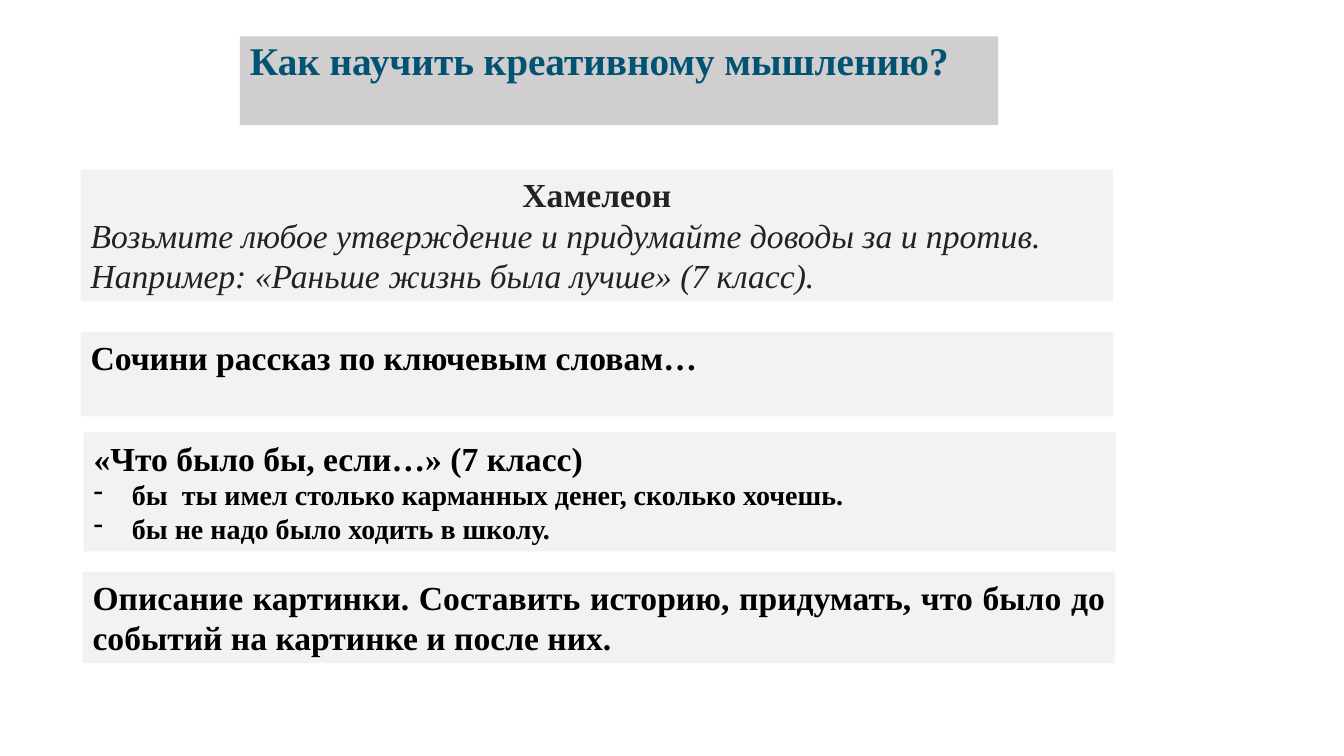
from lxml import etree
from pptx import Presentation
from pptx.dml.color import RGBColor
from pptx.enum.text import PP_ALIGN
from pptx.oxml.ns import qn
from pptx.util import Inches, Pt

LEFT, CENTER, JUSTIFY = PP_ALIGN.LEFT, PP_ALIGN.CENTER, PP_ALIGN.JUSTIFY
FONT = "Times New Roman"
PANEL_FILL = "F2F2F2"
PANEL_WIDTH = 10.24
BULLET_INDENT = 0.38


def color(value):
    return RGBColor.from_string(value)


def add_panel(slide, left, top, width, height, fill):
    """Add a filled text box and return its text frame."""
    panel = slide.shapes.add_textbox(*map(Inches, (left, top, width, height)))
    panel.fill.solid()
    panel.fill.fore_color.rgb = color(fill)
    panel.text_frame.word_wrap = True
    return panel.text_frame


def add_dash(paragraph):
    properties = paragraph._p.get_or_add_pPr()
    properties.set("marL", str(Inches(BULLET_INDENT)))
    properties.set("indent", str(-Inches(BULLET_INDENT)))
    etree.SubElement(properties, qn("a:buFontTx"))
    etree.SubElement(properties, qn("a:buChar")).set("char", "-")


def add_line(frame, text, size=24, ink="000000", bold=True, align=LEFT, dash=False):
    """Write into the first paragraph while it is empty, then append."""
    first = frame.paragraphs[0]
    paragraph = frame.add_paragraph() if first.text else first
    paragraph.text = text
    paragraph.alignment = align
    if dash:
        add_dash(paragraph)
    font = paragraph.font
    font.name, font.size = FONT, Pt(size)
    font.bold, font.italic = bold, not bold
    font.color.rgb = color(ink)
    return paragraph


def main():
    presentation = Presentation()
    presentation.slide_width = Inches(13.33)
    presentation.slide_height = Inches(7.5)
    slide = presentation.slides.add_slide(presentation.slide_layouts[6])

    title = add_panel(slide, 2.38, 0.36, 7.52, 0.88, "D0CECE")
    heading = add_line(title, "Как научить креативному мышлению?", 28, "025373")
    heading.line_spacing = 0.9

    tasks = [
        (0.8, 1.68, 1.31, [
            ("Хамелеон", dict(ink="222222", align=CENTER)),
            ("Возьмите любое утверждение и придумайте доводы за и против.",
             dict(ink="222222", bold=False)),
            ("Например: «Раньше жизнь была лучше» (7 класс).",
             dict(ink="222222", bold=False)),
        ]),
        (0.8, 3.29, 0.84, [("Сочини рассказ по ключевым словам…", {})]),
        (0.83, 4.29, 1.18, [
            ("«Что было бы, если…» (7 класс)", {}),
            ("бы  ты имел столько карманных денег, сколько хочешь.",
             dict(size=20, dash=True)),
            ("бы не надо было ходить в школу.", dict(size=20, dash=True)),
        ]),
        (0.82, 5.67, 0.91, [
            ("Описание картинки. Составить историю, придумать, что было до "
             "событий на картинке и после них.", dict(align=JUSTIFY)),
        ]),
    ]
    for left, top, height, lines in tasks:
        frame = add_panel(slide, left, top, PANEL_WIDTH, height, PANEL_FILL)
        for text, style in lines:
            add_line(frame, text, **style)

    presentation.save("out.pptx")


if __name__ == "__main__":
    main()
